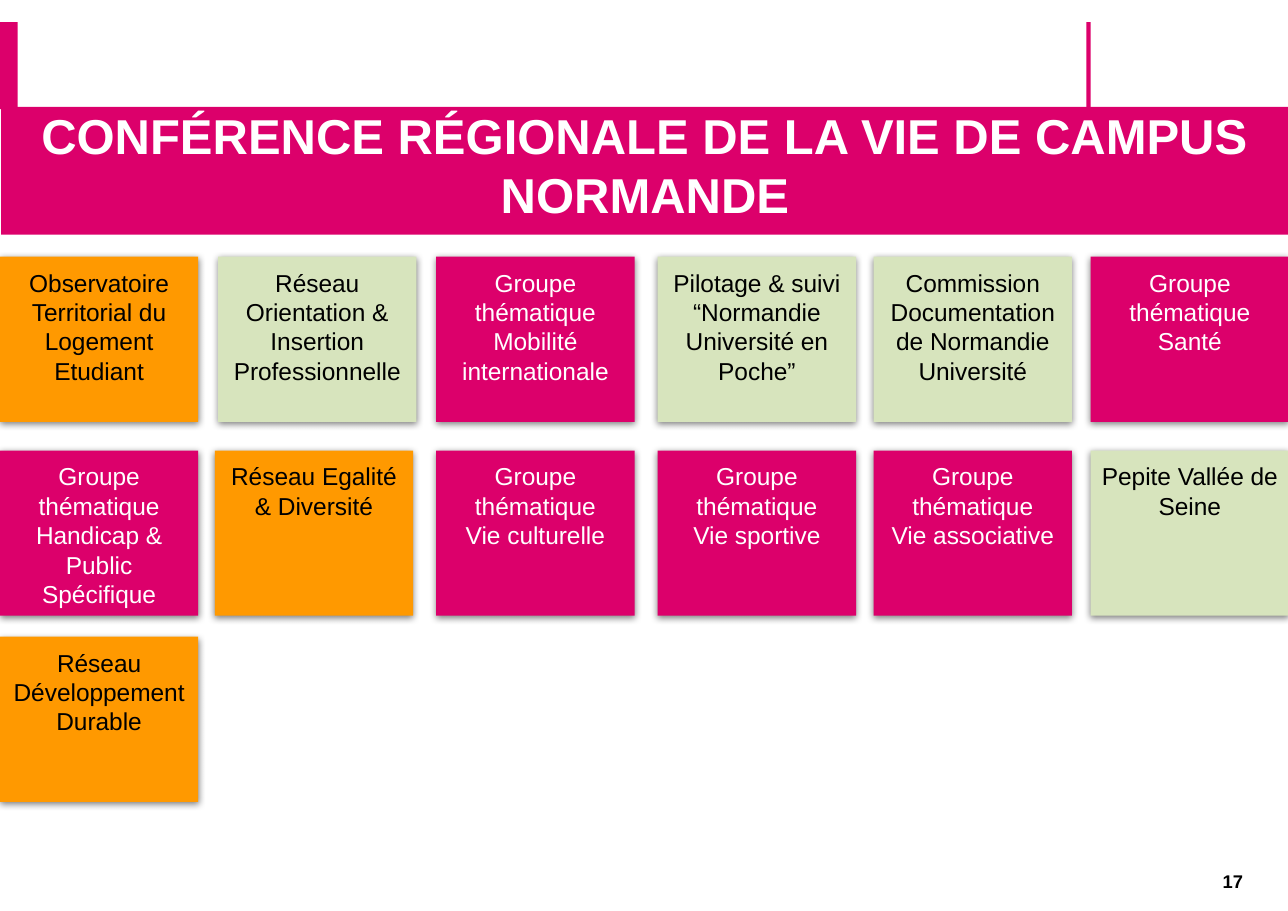
from lxml import etree
from pptx import Presentation
from pptx.dml.color import RGBColor
from pptx.enum.shapes import MSO_SHAPE as Shape
from pptx.enum.text import MSO_ANCHOR as Anchor, PP_ALIGN as Align
from pptx.oxml.ns import qn
from pptx.util import Inches, Pt

PINK, ORANGE, GREEN = "DC006B", "FF9900", "D7E4BD"
BLACK, WHITE = "000000", "FFFFFF"


def color(value):
    return RGBColor.from_string(value)


class CampusPage:
    """Holds the slide and draws its elements in one style."""
    font = "Arial"

    def __init__(self, deck):
        self.page = deck.slides.add_slide(deck.slide_layouts[6])

    def block(self, left, top, width, height, fill):
        box = self.page.shapes.add_shape(
            Shape.RECTANGLE, Inches(left), Inches(top), Inches(width), Inches(height))
        box.fill.solid()
        box.fill.fore_color.rgb = color(fill)
        box.line.fill.background()
        box.shadow.inherit = False
        return box

    def label(self, box, text, size, ink, anchor, bold=False, inset=(0.1, 0.1)):
        frame = box.text_frame
        frame.word_wrap = True
        frame.vertical_anchor = anchor
        frame.margin_left = frame.margin_right = Inches(inset[0])
        frame.margin_top = frame.margin_bottom = Inches(inset[1])
        para = frame.paragraphs[0]
        para.text = text
        para.alignment = Align.CENTER
        for span in para.runs:
            span.font.name = self.font
            span.font.size = Pt(size)
            span.font.bold = bold
            span.font.color.rgb = color(ink)

    def title(self, text):
        box = self.block(0.01, 0.97, 11.69, 1.16, PINK)
        self.label(box, text, 32, WHITE, Anchor.BOTTOM, bold=True)

    def tile(self, left, top, text, fill):
        box = self.block(left, top, 1.8, 1.5, fill)
        self.soft_shadow(box)
        self.label(box, text, 16, WHITE if fill == PINK else BLACK, Anchor.TOP)

    def soft_shadow(self, box):
        effects = box._element.spPr.find(qn("a:effectLst"))
        shadow = etree.SubElement(
            effects, qn("a:outerShdw"), blurRad=str(Pt(4.5)), dist=str(Pt(1.5)),
            dir="5400000", rotWithShape="0")
        tint = etree.SubElement(shadow, qn("a:srgbClr"), val=BLACK)
        etree.SubElement(tint, qn("a:alpha"), val="50000")

    def number(self, text):
        box = self.page.shapes.add_textbox(
            Inches(10.81), Inches(7.84), Inches(0.76), Inches(0.31))
        self.label(box, text, 12, BLACK, Anchor.MIDDLE, bold=True, inset=(0.11, 0.06))


def main():
    deck = Presentation()
    deck.slide_width, deck.slide_height = Inches(11.69), Inches(8.27)
    campus = CampusPage(deck)

    # Header bars, page number and title
    campus.block(0, 0.2, 0.16, 0.79, PINK)
    campus.block(9.86, 0.2, 0.04, 0.79, PINK)
    campus.number("17")
    campus.title("CONFÉRENCE RÉGIONALE DE LA VIE DE CAMPUS NORMANDE")

    # Networks and working groups, row by row
    columns = (0, 1.98, 3.96, 5.97, 7.93, 9.9)
    rows = {
        2.33: [
            ("Observatoire Territorial du\nLogement Etudiant", ORANGE),
            ("Réseau\nOrientation & Insertion Professionnelle", GREEN),
            ("Groupe thématique\nMobilité internationale", PINK),
            ("Pilotage & suivi\n“Normandie Université en Poche”", GREEN),
            ("Commission Documentation de Normandie Université", GREEN),
            ("Groupe thématique\nSanté", PINK),
        ],
        4.09: [
            ("Groupe thématique\nHandicap & Public Spécifique", PINK),
            ("Réseau Egalité & Diversité", ORANGE),
            ("Groupe thématique\nVie culturelle", PINK),
            ("Groupe thématique\nVie sportive", PINK),
            ("Groupe thématique\nVie associative", PINK),
            ("Pepite Vallée de Seine", GREEN),
        ],
        5.78: [("Réseau Développement Durable", ORANGE)],
    }
    nudges = {(4.09, 1.98): -0.03}
    for top, tiles in rows.items():
        for left, (text, fill) in zip(columns, tiles):
            campus.tile(left + nudges.get((top, left), 0), top, text, fill)

    deck.save("out.pptx")


if __name__ == "__main__":
    main()
